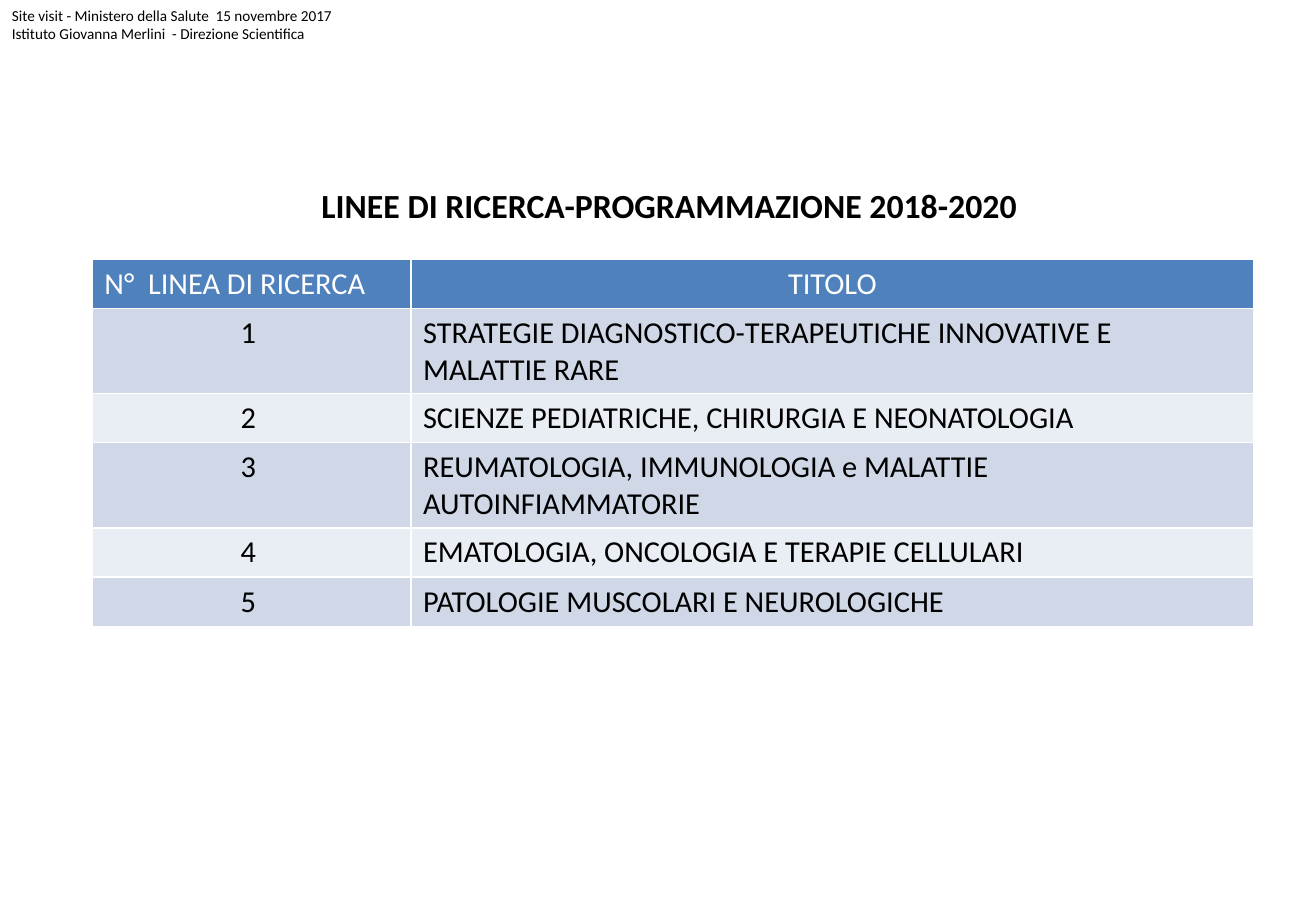
from dataclasses import dataclass

from lxml import etree
from pptx import Presentation
from pptx import util as u
from pptx.dml.color import RGBColor
from pptx.enum import text
from pptx.oxml import ns

FONT = "Calibri"
BLACK = RGBColor(0x00, 0x00, 0x00)
WHITE = RGBColor(0xFF, 0xFF, 0xFF)
HEADER_BLUE = RGBColor(0x4F, 0x81, 0xBD)
BAND_DARK = RGBColor(0xD0, 0xD8, 0xE8)
BAND_LIGHT = RGBColor(0xE9, 0xED, 0xF4)
LEFT = text.PP_ALIGN.LEFT
CENTER = text.PP_ALIGN.CENTER

HEADINGS = ("N°  LINEA DI RICERCA", "TITOLO")
RESEARCH_LINES = (
    "STRATEGIE DIAGNOSTICO-TERAPEUTICHE INNOVATIVE E MALATTIE RARE",
    "SCIENZE PEDIATRICHE, CHIRURGIA E NEONATOLOGIA",
    "REUMATOLOGIA, IMMUNOLOGIA e MALATTIE AUTOINFIAMMATORIE",
    "EMATOLOGIA, ONCOLOGIA E TERAPIE CELLULARI",
    "PATOLOGIE MUSCOLARI E NEUROLOGICHE",
)
COLUMN_WIDTHS = (u.Cm(6.66), u.Cm(17.62))
ROW_HEIGHT = u.Cm(1.03)


@dataclass(frozen=True)
class Style:
    size: int
    color: RGBColor = BLACK
    bold: bool = False
    align: text.PP_ALIGN = LEFT


@dataclass(frozen=True)
class Caption:
    words: str
    left: float
    top: float
    width: float
    height: float
    style: Style
    wrap: bool


CAPTIONS = (
    Caption(
        "Site visit - Ministero della Salute  15 novembre 2017\n"
        "Istituto Giovanna Merlini  - Direzione Scientifica",
        0, 0, 26.97, 1.02, Style(9), True,
    ),
    Caption(
        "LINEE DI RICERCA-PROGRAMMAZIONE 2018-2020",
        6.4, 3.73, 15.19, 1.12, Style(20, bold=True, align=CENTER), False,
    ),
)


def write(frame, words: str, style: Style) -> None:
    frame.text = words
    for para in frame.paragraphs:
        para.alignment = style.align
        for span in para.runs:
            span.font.name = FONT
            span.font.size = u.Pt(style.size)
            span.font.bold = style.bold
            span.font.color.rgb = style.color


def add_caption(page, caption: Caption) -> None:
    box = page.shapes.add_textbox(
        u.Cm(caption.left), u.Cm(caption.top),
        u.Cm(caption.width), u.Cm(caption.height),
    )
    write(box.text_frame, caption.words, caption.style)
    box.text_frame.word_wrap = caption.wrap


def add_borders(cell, color: RGBColor, width: int) -> None:
    properties = cell._tc.get_or_add_tcPr()
    for side in ("a:lnL", "a:lnR", "a:lnT", "a:lnB"):
        line = etree.SubElement(properties, ns.qn(side), w=str(width))
        fill = etree.SubElement(line, ns.qn("a:solidFill"))
        etree.SubElement(fill, ns.qn("a:srgbClr"), val=str(color))


def fill_cell(cell, words: str, style: Style, background: RGBColor) -> None:
    write(cell.text_frame, words, style)
    add_borders(cell, WHITE, u.Pt(1))
    cell.fill.solid()
    cell.fill.fore_color.rgb = background


def add_research_table(page) -> None:
    row_count = len(RESEARCH_LINES) + 1
    table = page.shapes.add_table(
        row_count, len(COLUMN_WIDTHS), u.Cm(1.93), u.Cm(5.42),
        sum(COLUMN_WIDTHS), ROW_HEIGHT * row_count,
    ).table
    for column, width in zip(table.columns, COLUMN_WIDTHS):
        column.width = width
    for row in table.rows:
        row.height = ROW_HEIGHT

    for index, (heading, align) in enumerate(zip(HEADINGS, (LEFT, CENTER))):
        fill_cell(table.cell(0, index), heading, Style(18, WHITE, align=align), HEADER_BLUE)
    for number, title in enumerate(RESEARCH_LINES, start=1):
        band = BAND_DARK if number % 2 else BAND_LIGHT
        fill_cell(table.cell(number, 0), f"{number} ", Style(18, align=CENTER), band)
        fill_cell(table.cell(number, 1), title, Style(18), band)


def main() -> None:
    deck = Presentation()
    deck.slide_width = u.Cm(27.51)
    deck.slide_height = u.Cm(19.05)
    page = deck.slides.add_slide(deck.slide_layouts[6])
    for caption in CAPTIONS:
        add_caption(page, caption)
    add_research_table(page)
    deck.save("out.pptx")


if __name__ == "__main__":
    main()
